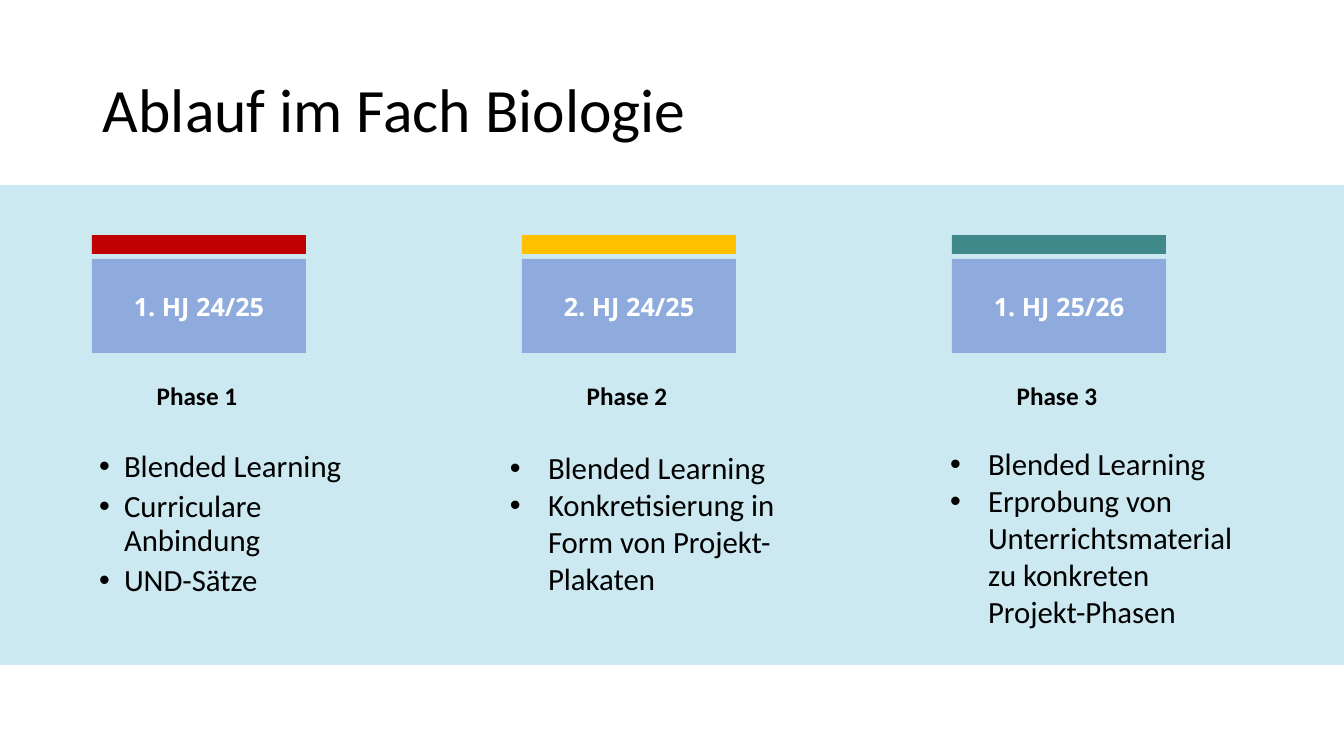
from dataclasses import dataclass

from lxml import etree
from pptx import Presentation, util as u
from pptx.dml.color import RGBColor
from pptx.enum import shapes, text
from pptx.oxml.ns import qn

PX = u.Inches(7.5) / 756


@dataclass(frozen=True)
class Theme:
    band: str = "CCE9F2"
    card: str = "8FAADC"
    ink: str = "000000"
    white: str = "FFFFFF"
    font: str = "Calibri"
    card_font: str = "Noto Sans"
    title: int = 44
    list: int = 22
    label: int = 18


theme = Theme()


def add_block(left, top, width, height, color):
    block = slide.shapes.add_shape(
        shapes.MSO_SHAPE.RECTANGLE, *(round(n * PX) for n in (left, top, width, height)))
    block.shadow.inherit = False
    block.fill.solid()
    block.fill.fore_color.rgb = RGBColor.from_string(color)
    block.line.fill.background()
    return block


def style(frame, size, color, font=theme.font, bold=False, align=text.PP_ALIGN.LEFT,
          anchor=text.MSO_ANCHOR.TOP, spacing=1.0, inset=5):
    """Format the whole text frame; inset is its top and bottom margin in px."""
    frame.word_wrap = True
    frame.auto_size = text.MSO_AUTO_SIZE.NONE
    frame.vertical_anchor = anchor
    frame.margin_left = frame.margin_right = round(10 * PX)
    frame.margin_top = frame.margin_bottom = round(inset * PX)
    for paragraph in frame.paragraphs:
        paragraph.alignment = align
        paragraph.line_spacing = spacing
        paragraph.space_before = u.Pt(0)
        for run in paragraph.runs:
            run.font.name = font
            run.font.size = u.Pt(size)
            run.font.bold = bold
            run.font.color.rgb = RGBColor.from_string(color)


deck = Presentation()
deck.slide_width, deck.slide_height = round(1344 * PX), round(756 * PX)
slide = deck.slides.add_slide(deck.slide_layouts.get_by_name("Comparison"))

# The band lies behind the placeholders
band = add_block(0, 185, 1344, 480, theme.band)
slide.shapes._spTree.insert(2, band._element)

title = slide.shapes.title
title.left, title.top, title.width, title.height = (round(n * PX) for n in (93, 40, 1159, 146))
title.text_frame.text = "Ablauf im Fach Biologie"
style(title.text_frame, theme.title, theme.ink, anchor=text.MSO_ANCHOR.MIDDLE, spacing=0.9)

# Half-year, accent, list box, list margin, hanging indent, line spacing, space before, inset, items
phases = [
    ("1. HJ 24/25", "C00000", (38, 441, 322, 94), 76, 25, 0.9, 5, 10,
     ["Blended Learning", "Curriculare Anbindung", "UND-Sätze"]),
    ("2. HJ 24/25", "FFC000", (500, 444, 310, 190), 38, 38, 1.0, 0, 5,
     ["Blended Learning", "Konkretisierung in Form von Projekt-Plakaten"]),
    ("1. HJ 25/26", "40898A", (940, 440, 322, 228), 38, 38, 1.0, 0, 5,
     ["Blended Learning", "Erprobung von Unterrichtsmaterial zu konkreten Projekt-Phasen"]),
]
*bodies, spare = list(slide.placeholders)[1:]
spare._element.getparent().remove(spare._element)

for column, (phase, body) in enumerate(zip(phases, bodies)):
    half_year, accent, box, margin, hanging, spacing, gap, inset, items = phase
    left = 92 + 430 * column

    add_block(left, 235, 214, 19, accent)
    card = add_block(left, 259, 214, 94, theme.card)
    card.text_frame.text = half_year
    style(card.text_frame, theme.label, theme.white, theme.card_font, True,
          text.PP_ALIGN.CENTER, text.MSO_ANCHOR.MIDDLE, inset=10)

    label = slide.shapes.add_textbox(*(round(n * PX) for n in (left + 16, 374, 178, 46)))
    label.text_frame.text = f"Phase {column + 1}"
    style(label.text_frame, theme.label, theme.ink, bold=True,
          align=text.PP_ALIGN.CENTER, spacing=0.9, inset=10)

    body.left, body.top, body.width, body.height = (round(n * PX) for n in box)
    body.text_frame.text = "\n".join(items)
    for paragraph in body.text_frame.paragraphs:
        properties = paragraph._p.get_or_add_pPr()
        properties.set("marL", str(round(margin * PX)))
        properties.set("indent", str(round(-hanging * PX)))
        etree.SubElement(properties, qn("a:buFont")).set("typeface", "Arial")
        etree.SubElement(properties, qn("a:buChar")).set("char", "•")
    style(body.text_frame, theme.list, theme.ink, spacing=spacing, inset=inset)
    for paragraph in body.text_frame.paragraphs[1:]:
        paragraph.space_before = u.Pt(gap)

deck.save("out.pptx")
